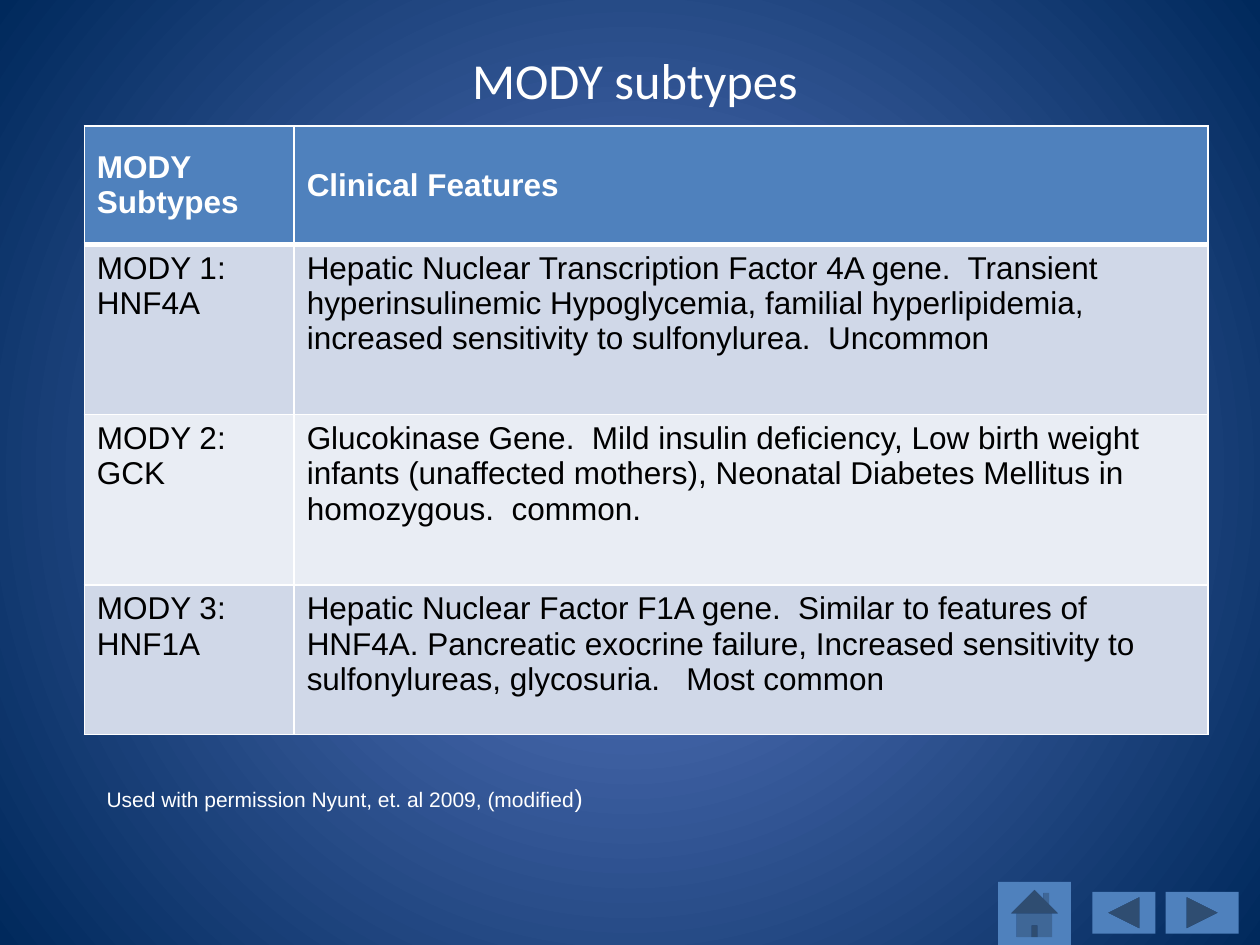
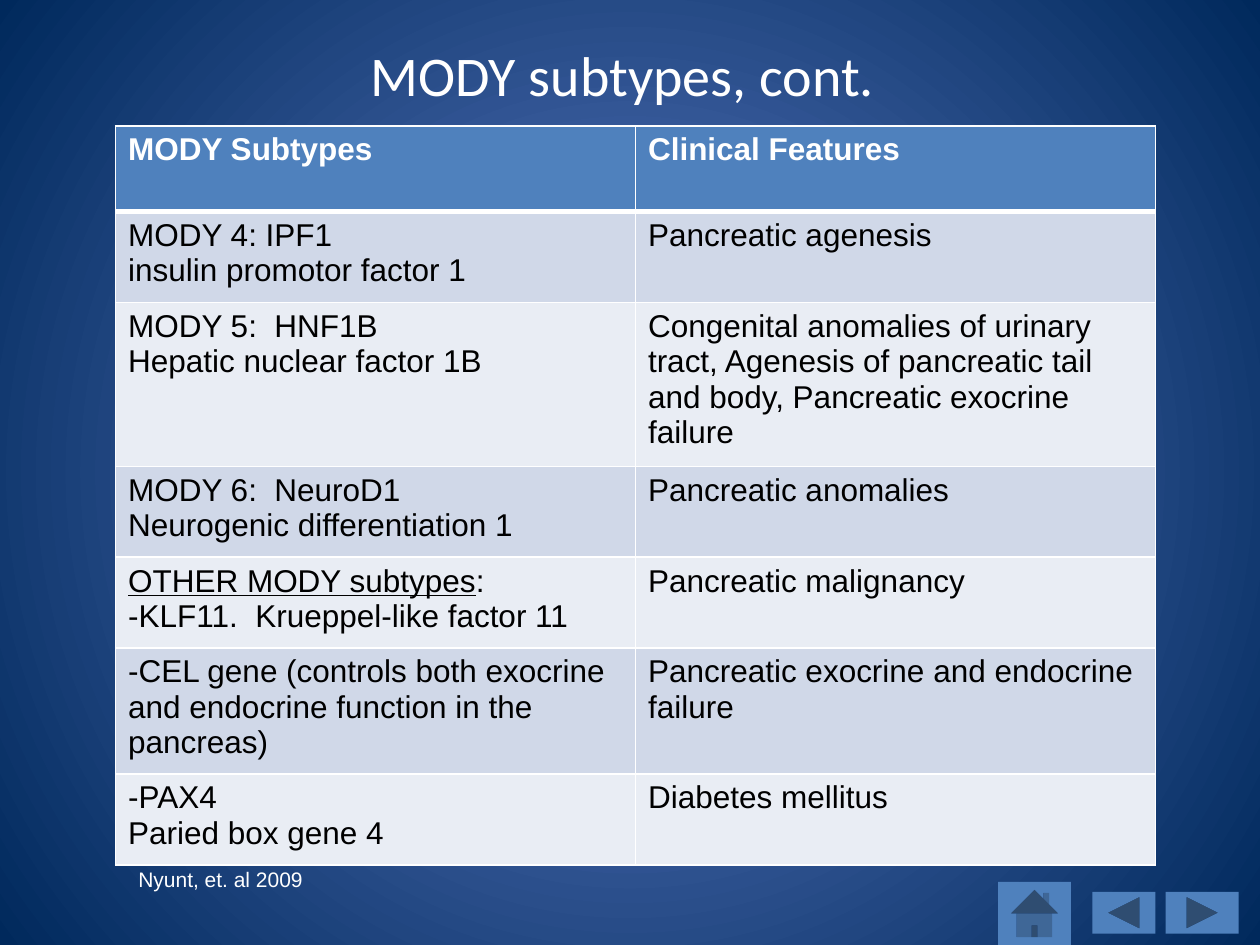
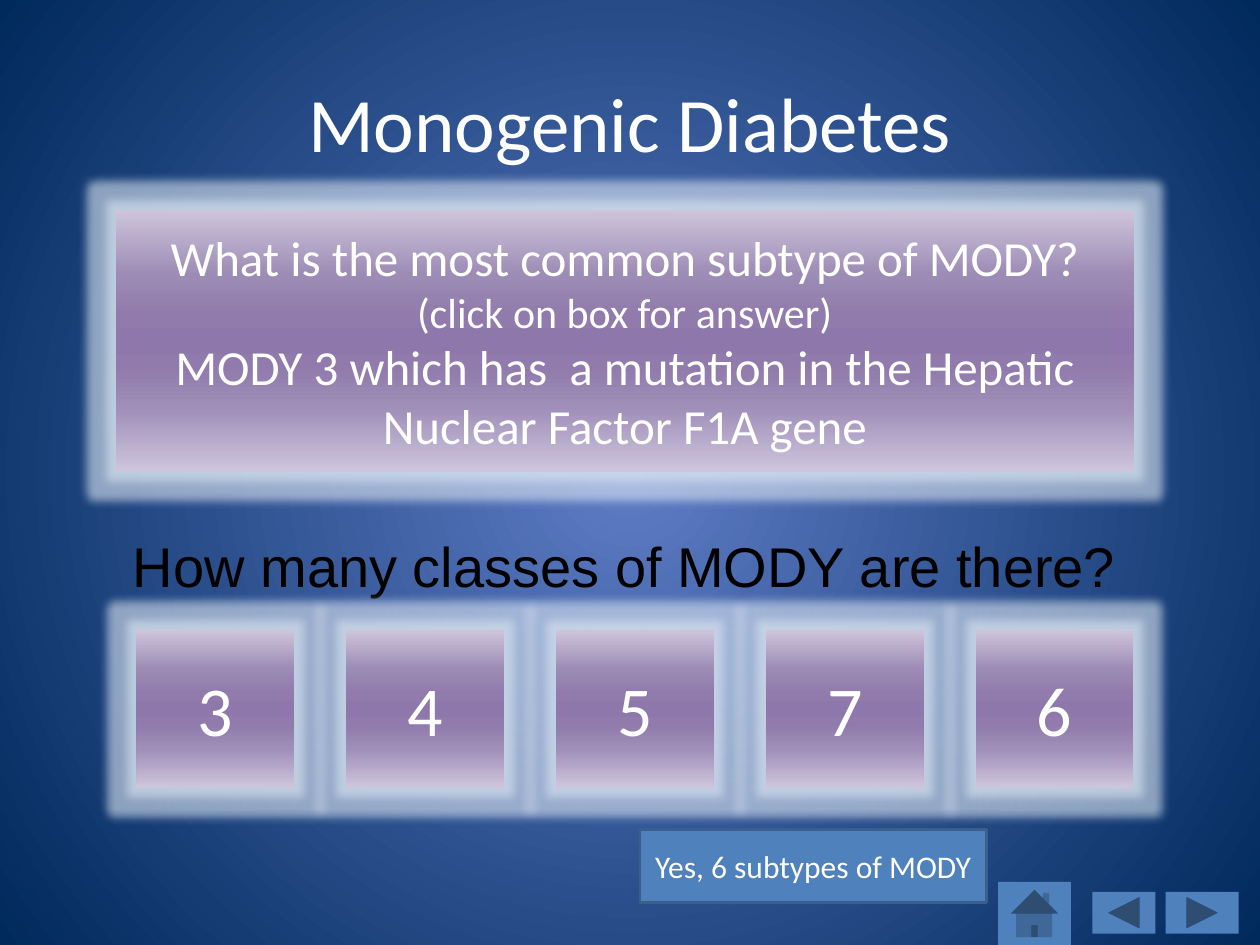
from dataclasses import dataclass

from lxml.etree import SubElement
from pptx import Presentation
from pptx.dml.color import RGBColor
from pptx.enum.shapes import MSO_SHAPE as Preset
from pptx.enum.text import MSO_ANCHOR as Anchor, PP_ALIGN as Align
from pptx.oxml import parse_xml
from pptx.oxml.ns import nsdecls, qn
from pptx.util import Cm, Pt


@dataclass(frozen=True)
class Theme:
    white: str = "FFFFFF"
    black: str = "000000"
    accent: str = "4F81BD"
    accent_edge: str = "3A5F8C"
    row_fills: tuple = ("E9EDF4", "D0D8E8")
    glow: str = "DCE6F2"
    backdrop: tuple = ((0, "5E7CC5"), (100, "00295C"))
    purple: tuple = ((0, "CEC5DC"), (25, "9C8BB4"), (40, "907BAC"), (50, "8E78AB"),
                     (60, "907BAC"), (75, "9F8EB8"), (100, "CEC5DD"))
    heading_font: str = "Calibri"
    body_font: str = "Arial"
    caption_size: float = 12
    table_size: float = 18
    note_size: float = 24
    question_size: float = 28
    prompt_size: float = 32
    answer_size: float = 40


theme = Theme()


def write_text(frame, paragraphs, size, font, color, align=Align.LEFT, bold=False):
    """Fill a frame; a paragraph is a string or a list of (text, font settings) runs."""
    frame.word_wrap = True
    for index, content in enumerate(paragraphs):
        para = frame.add_paragraph() if index else frame.paragraphs[0]
        para.alignment = align
        para.font.size = Pt(size)
        para.font.name = font
        para.font.bold = bold
        para.font.color.rgb = RGBColor.from_string(color)
        spans = [(content, {})] if isinstance(content, str) else content
        for text, settings in spans:
            span = para.add_run()
            span.text = text
            for name, value in settings.items():
                setattr(span.font, name, value)


def apply_gradient(fill, owner, stops, direction):
    """Replace the gradient inside owner by these stops and direction XML."""
    fill.gradient()
    gradient = owner.xpath(".//a:gradFill")[0]
    marks = "".join(f'<a:gs pos="{place * 1000}"><a:srgbClr val="{color}"/></a:gs>'
                    for place, color in stops)
    gradient.getparent().replace(gradient, parse_xml(
        f'<a:gradFill {nsdecls("a")} rotWithShape="1">'
        f"<a:gsLst>{marks}</a:gsLst>{direction}</a:gradFill>"))


deck = Presentation()
deck.slide_width, deck.slide_height = Cm(25.4), Cm(19.05)
master = deck.slide_master
apply_gradient(master.background.fill, master.element, theme.backdrop,
               '<a:path path="circle"><a:fillToRect l="50000" t="50000" '
               'r="50000" b="50000"/></a:path>')

# Titles and navigation buttons
titles = [("MODY subtypes", 28.8, 1.37, 0.6),
          ("MODY subtypes, cont.", 32, 1.12, 0.5),
          ("Monogenic Diabetes", 44, 1.27, 1.45)]
buttons = [(Preset.ACTION_BUTTON_BACK_OR_PREVIOUS, 22.02, 17.98, 1.27, 0.84),
           (Preset.ACTION_BUTTON_FORWARD_OR_NEXT, 23.5, 17.98, 1.47, 0.84),
           (Preset.ACTION_BUTTON_HOME, 20.12, 17.78, 1.47, 1.27)]
pages = []
for title, size, left, top in titles:
    page = deck.slides.add_slide(deck.slide_layouts[6])
    pages.append(page)
    for preset, *place in buttons:
        button = page.shapes.add_shape(preset, *map(Cm, place))
        button.shadow.inherit = False
        button.fill.solid()
        button.fill.fore_color.rgb = RGBColor.from_string(theme.accent)
        button.line.fill.background()
    box = page.shapes.add_textbox(Cm(left), Cm(top), Cm(22.86), Cm(2))
    box.text_frame.vertical_anchor = Anchor.MIDDLE
    write_text(box.text_frame, [title], size, theme.heading_font, theme.white, Align.CENTER)

# Subtype tables
common_rows = [
    (["MODY Subtypes"], ["Clinical Features"]),
    (["MODY 1:", "HNF4A"],
     ["Hepatic Nuclear Transcription Factor 4A gene.  Transient hyperinsulinemic "
      "Hypoglycemia, familial hyperlipidemia, increased sensitivity to sulfonylurea.  "
      "Uncommon"]),
    (["MODY 2:", "GCK"],
     ["Glucokinase Gene.  Mild insulin deficiency, Low birth weight infants (unaffected "
      "mothers), Neonatal Diabetes Mellitus in homozygous.  common."]),
    (["MODY 3:", "HNF1A"],
     ["Hepatic Nuclear Factor F1A gene.  Similar to features of HNF4A. Pancreatic "
      "exocrine failure, Increased sensitivity to sulfonylureas, glycosuria.   "
      "Most common"]),
]
other_rows = [
    common_rows[0],
    (["MODY 4: IPF1", "insulin promotor factor 1"], ["Pancreatic agenesis"]),
    (["MODY 5:  HNF1B", "Hepatic nuclear factor 1B"],
     ["Congenital anomalies of urinary tract, Agenesis of pancreatic tail and body, "
      "Pancreatic exocrine failure"]),
    (["MODY 6:  NeuroD1", "Neurogenic differentiation 1"], ["Pancreatic anomalies"]),
    ([[("OTHER MODY subtypes", {"underline": True}), (":", {})],
      "-KLF11.  Krueppel-like factor 11"], ["Pancreatic malignancy"]),
    (["-CEL gene (controls both exocrine and endocrine function in the pancreas)"],
     ["Pancreatic exocrine and endocrine failure"]),
    (["-PAX4", "Paried box gene 4"], ["Diabetes mellitus"]),
]
tables = [
    (common_rows, 1.7, (4.23, 18.42), (2.39, 3.43, 3.43, 3.02), Anchor.MIDDLE),
    (other_rows, 2.33, (10.48, 10.48), (1.73, 1.83, 2.74, 1.83, 1.83, 1.96, 1.83),
     Anchor.TOP),
]
for page, (rows, left, widths, heights, header_anchor) in zip(pages, tables):
    table = page.shapes.add_table(len(rows), len(widths), Cm(left), Cm(2.54),
                                  Cm(sum(widths)), Cm(sum(heights))).table
    table.horz_banding = False
    for column, width in zip(table.columns, widths):
        column.width = Cm(width)
    for row_index, (row, height) in enumerate(zip(rows, heights)):
        table.rows[row_index].height = Cm(height)
        header = row_index == 0
        for column_index, paragraphs in enumerate(row):
            cell = table.cell(row_index, column_index)
            cell.vertical_anchor = header_anchor if header else Anchor.TOP
            write_text(cell.text_frame, paragraphs, theme.table_size, theme.body_font,
                       theme.white if header else theme.black, bold=header)
            properties = cell._tc.get_or_add_tcPr()
            for side in ("lnL", "lnR", "lnT", "lnB"):
                heavy = (row_index, side) in ((0, "lnB"), (1, "lnT"))
                edge = SubElement(properties, qn(f"a:{side}"), w=str(Pt(3 if heavy else 1)))
                paint = SubElement(edge, qn("a:solidFill"))
                SubElement(paint, qn("a:srgbClr"), val=theme.white)
            cell.fill.solid()
            cell.fill.fore_color.rgb = RGBColor.from_string(
                theme.accent if header else theme.row_fills[row_index % 2])

# Source credits and the second question
permission = [("Used with permission Nyunt, et. al 2009, (modified", {}),
              (")", {"size": Pt(14)})]
captions = [
    (permission, theme.caption_size, theme.white, 1.9, 15.67, 12.5, 0.86),
    ("Nyunt, et. al 2009", theme.caption_size, theme.white, 2.54, 17.35, 6.78, 0.76),
    ("How many classes of MODY are there?", theme.prompt_size, theme.black,
     2.43, 10.59, 21.27, 1.63),
]
for page, (caption, size, color, *place) in zip(pages, captions):
    box = page.shapes.add_textbox(*map(Cm, place))
    write_text(box.text_frame, [caption], size, theme.body_font, color)

# Quiz boxes
quiz = pages[2]
question = [
    [("What is the most common subtype of MODY? ", {}),
     ("(click on box for answer)", {"size": Pt(theme.note_size)})],
    "MODY 3 which has  a mutation in the Hepatic Nuclear Factor F1A gene",
]
quiz_boxes = [(question, theme.question_size, 2.33, 4.23, 20.53, 5.29)]
for index, answer in enumerate("34576"):
    quiz_boxes.append(([answer], theme.answer_size, 2.75 + 4.23 * index, 12.7, 3.18, 3.18))
for paragraphs, size, *place in quiz_boxes:
    box = quiz.shapes.add_shape(Preset.RECTANGLE, *map(Cm, place))
    box.line.fill.background()
    apply_gradient(box.fill, box.element, theme.purple, '<a:lin ang="5400000" scaled="0"/>')
    box.shadow.inherit = False
    effects = box.element.spPr.find(qn("a:effectLst"))
    glow = SubElement(effects, qn("a:glow"), rad=str(Pt(11)))
    tint = SubElement(glow, qn("a:srgbClr"), val=theme.glow)
    SubElement(tint, qn("a:alpha"), val="60000")
    box.text_frame.vertical_anchor = Anchor.MIDDLE
    write_text(box.text_frame, paragraphs, size, theme.heading_font, theme.white, Align.CENTER)

reply = quiz.shapes.add_shape(Preset.RECTANGLE, Cm(12.9), Cm(16.72), Cm(6.99), Cm(1.48))
reply.shadow.inherit = False
reply.fill.solid()
reply.fill.fore_color.rgb = RGBColor.from_string(theme.accent)
reply.line.color.rgb = RGBColor.from_string(theme.accent_edge)
reply.line.width = Pt(1.5)
reply.text_frame.vertical_anchor = Anchor.MIDDLE
write_text(reply.text_frame, ["Yes, 6 subtypes of MODY"], theme.table_size,
           theme.heading_font, theme.white, Align.CENTER)

deck.save("out.pptx")
